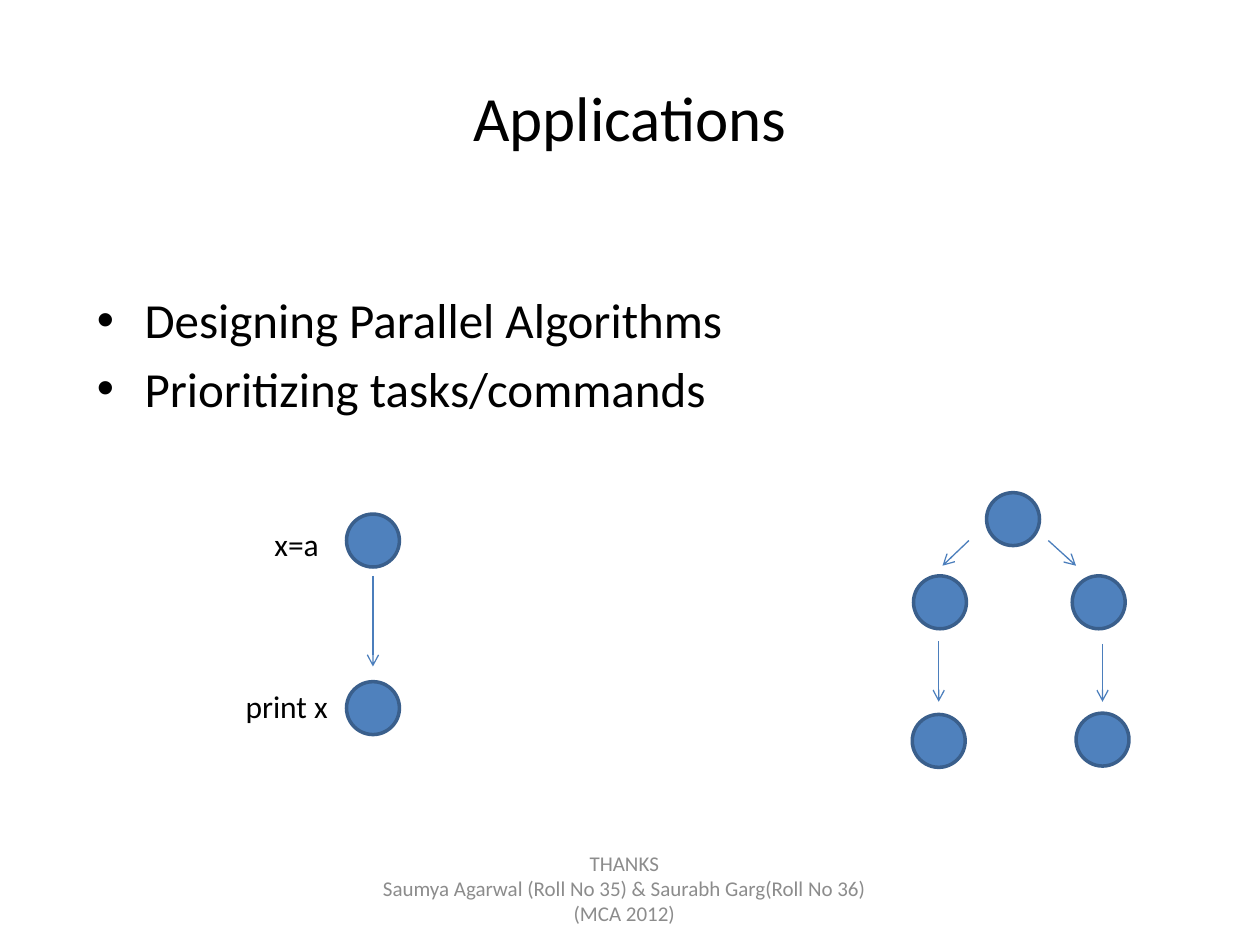
from typing import NamedTuple

from pptx import Presentation
from pptx import util as u
from pptx.dml.color import RGBColor
from pptx.enum import shapes, text
from pptx.oxml.ns import qn

BLACK = RGBColor(0x00, 0x00, 0x00)
GREY = RGBColor(0x8C, 0x8C, 0x8C)
NODE_FILL = RGBColor(0x4F, 0x81, 0xBD)
NODE_EDGE = RGBColor(0x3A, 0x5F, 0x8C)
ARROW_BLUE = RGBColor(0x4B, 0x7E, 0xBC)
FONT = "Calibri"
NODE_SIZE = 0.42


class Node(NamedTuple):
    left: float
    top: float


class Arrow(NamedTuple):
    x1: float
    y1: float
    x2: float
    y2: float


class Label(NamedTuple):
    left: float
    top: float
    width: float
    height: float
    lines: tuple[str, ...]
    size: int
    color: RGBColor = BLACK
    align: text.PP_ALIGN = text.PP_ALIGN.LEFT
    anchor: text.MSO_ANCHOR = text.MSO_ANCHOR.TOP
    bulleted: bool = False
    wrap: bool = True


NODES = (
    Node(2.75, 4.08), Node(2.75, 5.41),
    Node(7.83, 3.91),
    Node(7.25, 4.57), Node(8.51, 4.57),
    Node(7.24, 5.67), Node(8.54, 5.66),
)
ARROWS = (
    Arrow(2.96, 4.57, 2.96, 5.29),
    Arrow(7.69, 4.29, 7.48, 4.49),
    Arrow(8.32, 4.29, 8.54, 4.49),
    Arrow(7.45, 5.09, 7.45, 5.57),
    Arrow(8.75, 5.11, 8.75, 5.57),
)
CENTER, MIDDLE = text.PP_ALIGN.CENTER, text.MSO_ANCHOR.MIDDLE
LABELS = (
    Label(0.5, 0.3, 9, 1.25, ("Applications",), 36, align=CENTER, anchor=MIDDLE),
    Label(0.67, 2.25, 9, 4.95,
          ("Designing Parallel Algorithms", "Prioritizing tasks/commands"), 28, bulleted=True),
    Label(2.08, 4.12, 0.67, 0.4, ("x=a",), 18, wrap=False),
    Label(1.85, 5.4, 0.92, 0.4, ("print x",), 18, wrap=False),
    Label(2.83, 6.75, 4.25, 0.6,
          ("THANKS", "Saumya Agarwal (Roll No 35) & Saurabh Garg(Roll No 36) (MCA 2012)"),
          12, GREY, CENTER, MIDDLE),
)


def add_bullet(paragraph, size: int) -> None:
    paragraph.space_before = u.Pt(size * 0.2)
    properties = paragraph._p.get_or_add_pPr()
    properties.set("marL", str(u.Inches(0.38)))
    properties.set("indent", str(u.Inches(-0.38)))
    bullet_font = properties.makeelement(qn("a:buFont"), {"typeface": "Arial"})
    bullet = properties.makeelement(qn("a:buChar"), {"char": "•"})
    properties.extend((bullet_font, bullet))


def draw_label(slide, label: Label) -> None:
    box = slide.shapes.add_textbox(
        *map(u.Inches, (label.left, label.top, label.width, label.height)))
    frame = box.text_frame
    frame.word_wrap = label.wrap
    frame.vertical_anchor = label.anchor
    for index, line in enumerate(label.lines):
        paragraph = frame.add_paragraph() if index else frame.paragraphs[0]
        paragraph.alignment = label.align
        if label.bulleted:
            add_bullet(paragraph, label.size)
        run = paragraph.add_run()
        run.text = line
        run.font.name = FONT
        run.font.size = u.Pt(label.size)
        run.font.color.rgb = label.color


def draw_node(slide, node: Node) -> None:
    circle = slide.shapes.add_shape(
        shapes.MSO_SHAPE.OVAL,
        *map(u.Inches, (node.left, node.top, NODE_SIZE, NODE_SIZE)))
    circle.shadow.inherit = False
    circle.fill.solid()
    circle.fill.fore_color.rgb = NODE_FILL
    circle.line.color.rgb = NODE_EDGE
    circle.line.width = u.Pt(2)


def draw_arrow(slide, arrow: Arrow) -> None:
    connector = slide.shapes.add_connector(
        shapes.MSO_CONNECTOR.STRAIGHT, *map(u.Inches, arrow))
    connector.line.color.rgb = ARROW_BLUE
    connector.line.width = u.Pt(0.75)
    outline = connector.line._get_or_add_ln()
    outline.append(outline.makeelement(qn("a:tailEnd"), {"type": "arrow"}))
    properties = connector._element.spPr
    properties.append(properties.makeelement(qn("a:effectLst"), {}))


def main() -> None:
    deck = Presentation()
    deck.slide_width, deck.slide_height = u.Inches(10), u.Inches(7.5)
    slide = deck.slides.add_slide(deck.slide_layouts[6])
    for node in NODES:
        draw_node(slide, node)
    for arrow in ARROWS:
        draw_arrow(slide, arrow)
    for label in LABELS:
        draw_label(slide, label)
    deck.save("out.pptx")


if __name__ == "__main__":
    main()
